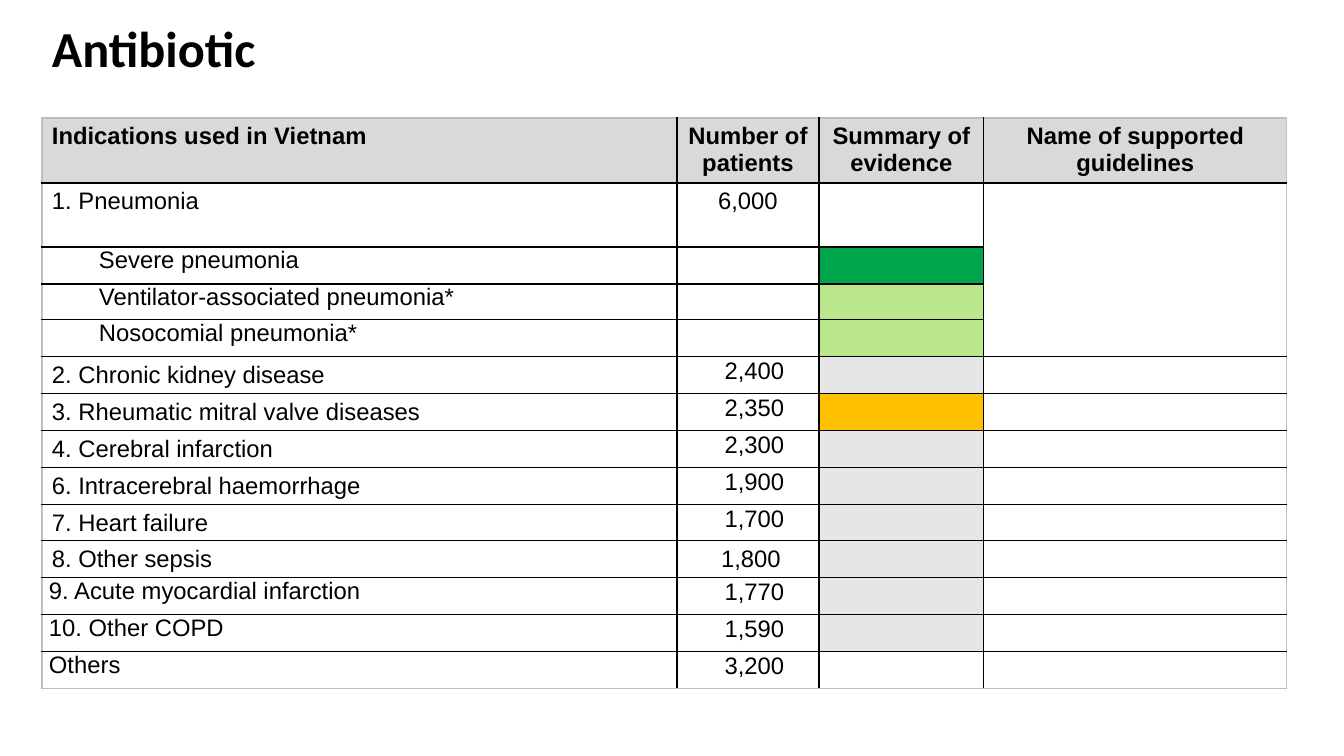
from lxml import etree
from pptx import Presentation
from pptx.dml.color import RGBColor
from pptx.enum.text import PP_ALIGN
from pptx.oxml.ns import qn
from pptx.util import Pt

LEFT, CENTER = PP_ALIGN.LEFT, PP_ALIGN.CENTER

TITLE = "Antibiotic"
HEADINGS = ["Indications used in Vietnam", "Number of patients",
            "Summary of evidence", "Name of supported guidelines"]
INDICATIONS = [
    ("1. Pneumonia", "plain", "6,000", "plain", None, 64),
    ("Severe pneumonia", "sub", "", "plain", "strong", 37),
    ("Ventilator-associated pneumonia*", "sub", "", "plain", "moderate", 36),
    ("Nosocomial pneumonia*", "sub", "", "plain", "moderate", 37),
    ("2. Chronic kidney disease", "plain", "2,400", "count", "none", 37),
    ("3. Rheumatic mitral valve diseases", "plain", "2,350", "count", "weak", 37),
    ("4. Cerebral infarction", "plain", "2,300", "count", "none", 37),
    ("6. Intracerebral haemorrhage", "plain", "1,900", "count", "none", 37),
    ("7. Heart failure", "plain", "1,700", "count", "none", 36),
    ("8. Other sepsis", "plain", "1,800", "sepsis", "none", 37),
    ("9. Acute myocardial infarction", "tight", "1,770", "count", "none", 37),
    ("10. Other COPD", "tight", "1,590", "count", "none", 37),
    ("Others", "tight", "3,200", "count", None, 37),
]
PNEUMONIA_ROWS = (1, 4)

THEME = {
    "ink": "000000", "edge": "BFBFBF", "heading": "D9D9D9",
    "strong": "00A44A", "moderate": "BAE78C", "weak": "FFC000", "none": "E7E6E6",
    "title_font": "Calibri", "body_font": "Arial",
    "title_size": 36, "body_size": 17, "blank_size": 12, "border": 1,
}
INSETS = {
    "plain": (10, 5, 10, 4), "sub": (7, 0, 7, 0), "tight": (7, 0, 7, 0),
    "count": (14, 1, 1, 0), "sepsis": (16, 5, 10, 4),
}
SUB_INDENT = 50
COLUMNS = [635, 142, 165, 303]
HEADING_HEIGHT = 65
TABLE_LEFT, TABLE_TOP = 42, 118
SCALE = 914400 / 100.8


def px(length):
    return round(length * SCALE)


def write(paragraph, words, font, size, bold):
    run = paragraph.add_run()
    run.text = words
    run.font.name = font
    run.font.size = Pt(size)
    run.font.bold = bold
    run.font.color.rgb = RGBColor.from_string(THEME["ink"])


def draw_borders(cell, row, column, last_row, last_column):
    outer = {"lnL": column == 0, "lnR": column == last_column,
             "lnT": row == 0, "lnB": row == last_row}
    properties = cell._tc.get_or_add_tcPr()
    for place, (side, is_outer) in enumerate(outer.items()):
        line = etree.Element(qn("a:" + side), w=str(Pt(THEME["border"])))
        solid = etree.SubElement(line, qn("a:solidFill"))
        etree.SubElement(solid, qn("a:srgbClr"),
                         val=THEME["edge" if is_outer else "ink"])
        properties.insert(place, line)


def fill_cell(cell, words, inset, align, bold, shade):
    left, top, right, bottom = INSETS[inset]
    cell.margin_left, cell.margin_top = px(left), px(top)
    cell.margin_right, cell.margin_bottom = px(right), px(bottom)
    if shade:
        cell.fill.solid()
        cell.fill.fore_color.rgb = RGBColor.from_string(THEME[shade])
    else:
        cell.fill.background()
    paragraph = cell.text_frame.paragraphs[0]
    paragraph.alignment = align
    if inset == "sub":
        paragraph.level = 1
        indent = paragraph._p.get_or_add_pPr()
        indent.set("marL", str(px(SUB_INDENT)))
        indent.set("indent", "0")
    if words:
        write(paragraph, words, THEME["body_font"], THEME["body_size"], bold)
    else:
        etree.SubElement(paragraph._p, qn("a:endParaRPr"),
                         sz=str(THEME["blank_size"] * 100))


def add_title(slide):
    frame = slide.shapes.add_textbox(px(42), px(19), px(1242), px(62)).text_frame
    frame.word_wrap = True
    heading = frame.paragraphs[0]
    heading.line_spacing = 0.9
    write(heading, TITLE, THEME["title_font"], THEME["title_size"], True)


def add_indications(slide):
    heights = [HEADING_HEIGHT] + [entry[-1] for entry in INDICATIONS]
    table = slide.shapes.add_table(
        len(heights), len(COLUMNS), px(TABLE_LEFT), px(TABLE_TOP),
        px(sum(COLUMNS)), px(sum(heights))).table
    table.horz_banding = False
    for column, width in zip(table.columns, COLUMNS):
        column.width = px(width)
    for row, height in zip(table.rows, heights):
        row.height = px(height)

    grid = [[(words, "plain", CENTER if column else LEFT, True, "heading")
             for column, words in enumerate(HEADINGS)]]
    for name, name_inset, patients, patients_inset, evidence, _ in INDICATIONS:
        grid.append([(name, name_inset, LEFT, False, None),
                     (patients, patients_inset, CENTER, False, None),
                     ("", "plain", LEFT, False, evidence),
                     ("", "plain", LEFT, False, None)])
    for row, entries in enumerate(grid):
        for column, entry in enumerate(entries):
            cell = table.cell(row, column)
            fill_cell(cell, *entry)
            draw_borders(cell, row, column, len(grid) - 1, len(COLUMNS) - 1)

    first, last = PNEUMONIA_ROWS
    guidelines = len(COLUMNS) - 1
    table.cell(first, guidelines).merge(table.cell(last, guidelines))


def main():
    deck = Presentation()
    deck.slide_width, deck.slide_height = px(1344), px(756)
    slide = deck.slides.add_slide(deck.slide_layouts[6])
    add_indications(slide)
    add_title(slide)
    deck.save("out.pptx")


if __name__ == "__main__":
    main()
